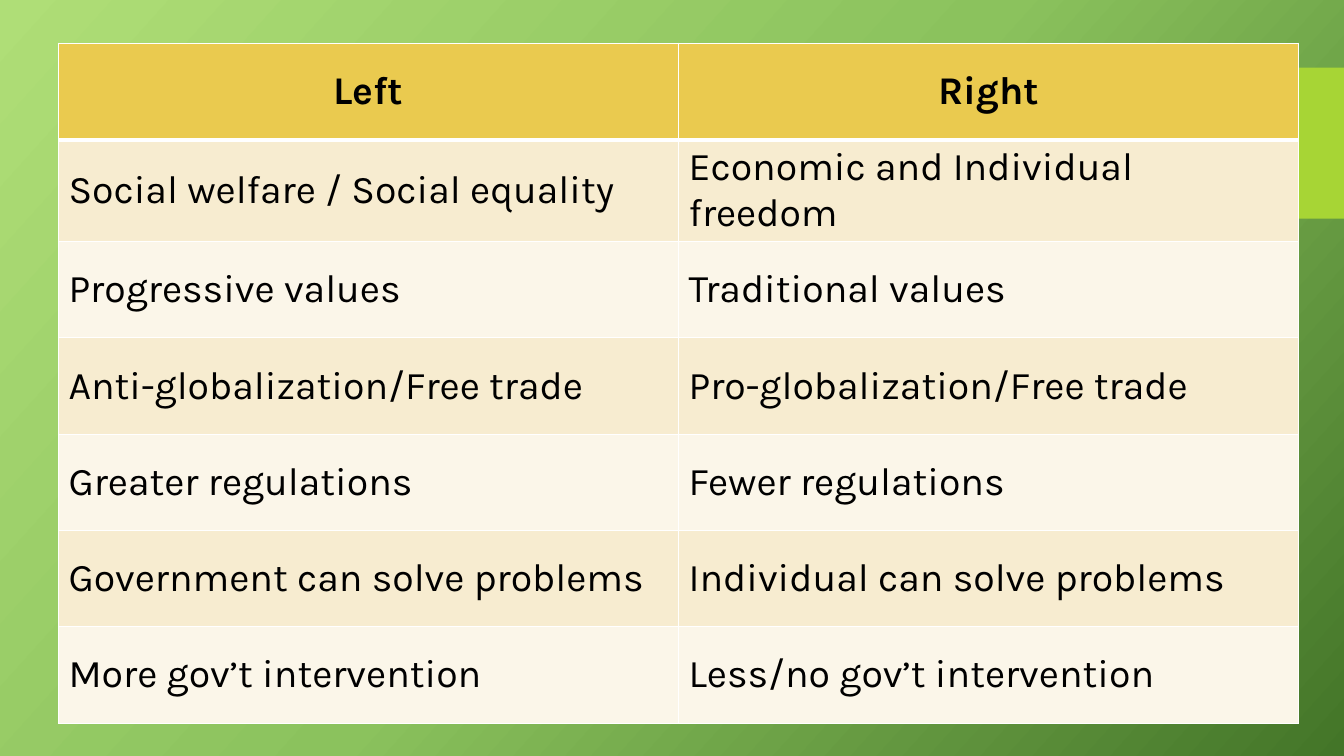
from copy import deepcopy

from lxml.etree import SubElement
from pptx import Presentation
from pptx.dml.color import RGBColor
from pptx.enum.shapes import MSO_SHAPE
from pptx.enum.text import MSO_ANCHOR, PP_ALIGN
from pptx.oxml.ns import qn
from pptx.util import Inches, Pt

BLACK = RGBColor(0x00, 0x00, 0x00)
WHITE = RGBColor(0xFF, 0xFF, 0xFF)
LIME = RGBColor(0xA7, 0xD5, 0x35)
HEADER_GOLD = RGBColor(0xEA, 0xCA, 0x4F)
BAND_DARK = RGBColor(0xF7, 0xEC, 0xD0)
BAND_LIGHT = RGBColor(0xFB, 0xF6, 0xE9)
BACKGROUND_STOPS = [
    (0, RGBColor(0xAF, 0xDE, 0x77)),
    (0.5, RGBColor(0x8B, 0xC2, 0x5D)),
    (1, RGBColor(0x43, 0x75, 0x28)),
]
FONT = "Karla"

COMPARISON = [
    ("Left", "Right"),
    ("Social welfare / Social equality", "Economic and Individual freedom"),
    ("Progressive values", "Traditional values"),
    ("Anti-globalization/Free trade", "Pro-globalization/Free trade"),
    ("Greater regulations", "Fewer regulations"),
    ("Government can solve problems", "Individual can solve problems"),
    ("More gov’t intervention", "Less/no gov’t intervention"),
]


def paint_background(slide):
    fill = slide.background.fill
    fill.gradient()
    fill.gradient_angle = 318
    stop_list = next(slide.element.iter(qn("a:gsLst")))
    stop_list.append(deepcopy(stop_list[-1]))
    for stop, (position, color) in zip(fill.gradient_stops, BACKGROUND_STOPS):
        stop.position = position
        stop.color.rgb = color


def add_side_tab(slide, left, top, width, height):
    tab = slide.shapes.add_shape(MSO_SHAPE.RECTANGLE, left, top, width, height)
    tab.shadow.inherit = False
    tab.fill.solid()
    tab.fill.fore_color.rgb = LIME
    tab.line.fill.background()


def set_borders(cell, bottom_width):
    """Draw white borders; call before filling so the lines precede the fill."""
    properties = cell._tc.get_or_add_tcPr()
    widths = {"a:lnL": 1, "a:lnR": 1, "a:lnT": 1, "a:lnB": bottom_width}
    for tag, width in widths.items():
        line = SubElement(properties, qn(tag), w=str(Pt(width)))
        solid = SubElement(line, qn("a:solidFill"))
        SubElement(solid, qn("a:srgbClr"), val=str(WHITE))


def format_cell(cell, text, color, is_header):
    set_borders(cell, 3 if is_header else 1)
    cell.fill.solid()
    cell.fill.fore_color.rgb = color
    cell.vertical_anchor = MSO_ANCHOR.MIDDLE
    paragraph = cell.text_frame.paragraphs[0]
    paragraph.alignment = PP_ALIGN.CENTER if is_header else PP_ALIGN.LEFT
    run = paragraph.add_run()
    run.text = text
    run.font.name = FONT
    run.font.size = Pt(28)
    run.font.bold = is_header
    run.font.color.rgb = BLACK


def add_comparison_table(slide, left, top, width, height):
    table = slide.shapes.add_table(
        len(COMPARISON), len(COMPARISON[0]), left, top, width, height
    ).table
    for row_index, texts in enumerate(COMPARISON):
        is_header = row_index == 0
        band = BAND_DARK if row_index % 2 else BAND_LIGHT
        color = HEADER_GOLD if is_header else band
        for column_index, text in enumerate(texts):
            format_cell(table.cell(row_index, column_index), text, color, is_header)


def main():
    presentation = Presentation()
    presentation.slide_width = Inches(13.33)
    presentation.slide_height = Inches(7.5)
    slide = presentation.slides.add_slide(presentation.slide_layouts[6])
    paint_background(slide)
    add_side_tab(slide, Inches(11.58), Inches(0.67), Inches(1.75), Inches(1.5))
    add_comparison_table(slide, Inches(0.58), Inches(0.43), Inches(12.3), Inches(6.69))
    presentation.save("out.pptx")


if __name__ == "__main__":
    main()
